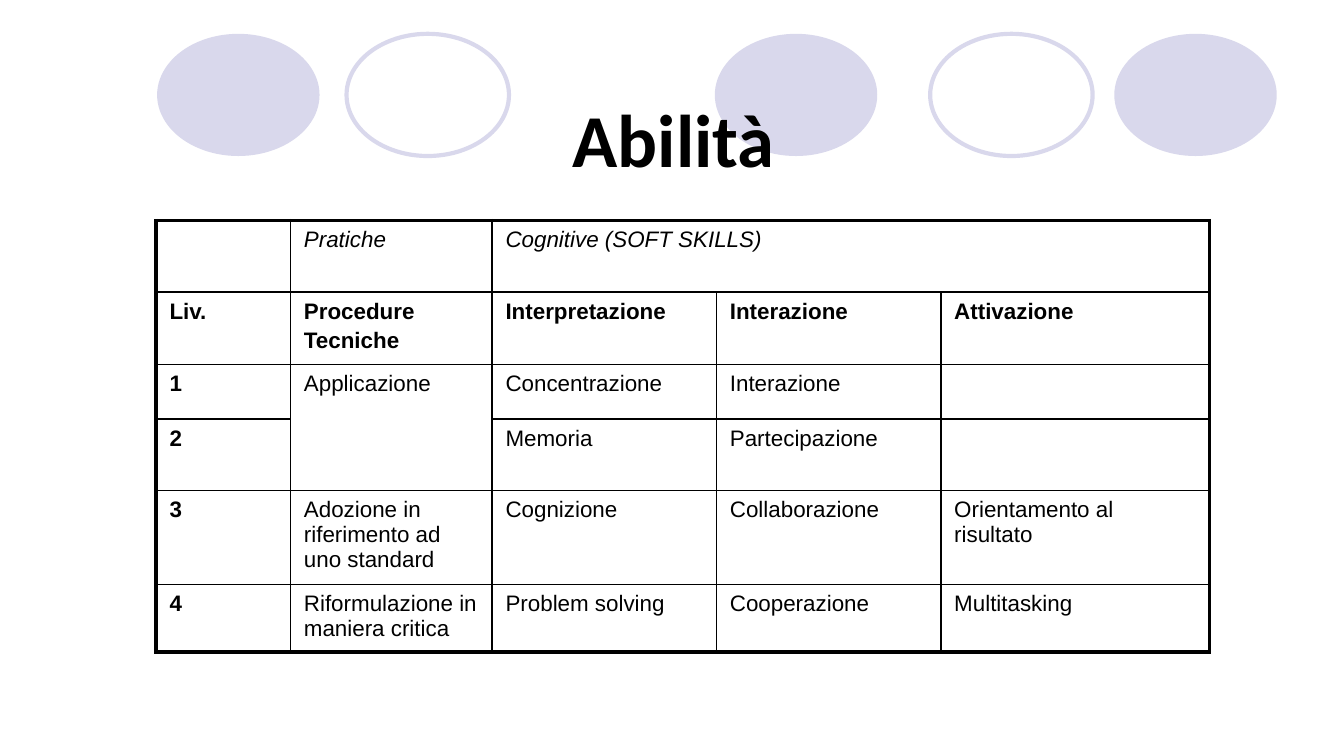
from typing import NamedTuple

from lxml.etree import SubElement
from pptx import Presentation
from pptx.dml.color import RGBColor
from pptx.enum.shapes import MSO_SHAPE
from pptx.enum.text import MSO_ANCHOR, MSO_AUTO_SIZE, PP_ALIGN
from pptx.oxml.ns import qn
from pptx.util import Cm, Pt

COLORS = {"ink": "000000", "lilac": "D9D8EC"}
THIN, THICK = Pt(1), Pt(2.25)


class Oval(NamedTuple):
    left: float
    filled: bool


class Merge(NamedTuple):
    first: tuple[int, int]
    last: tuple[int, int]


OVALS = [Oval(2.97, True), Oval(6.55, False), Oval(13.51, True),
         Oval(17.58, False), Oval(21.06, True)]
COLUMN_WIDTHS = [2.54, 3.81, 4.24, 4.24, 5.08]
ROW_HEIGHTS = [1.35, 1.37, 1.02, 1.35, 1.78, 1.27]
MERGES = [Merge((0, 2), (0, 4)), Merge((2, 1), (3, 1))]
SKILLS = [
    ["", "Pratiche", "Cognitive (SOFT SKILLS)", "", ""],
    ["Liv.", "Procedure\nTecniche", "Interpretazione", "Interazione", "Attivazione"],
    ["1", "Applicazione", "Concentrazione", "Interazione", ""],
    ["2", "", "Memoria", "Partecipazione", ""],
    ["3", "Adozione in riferimento ad uno standard", "Cognizione",
     "Collaborazione", "Orientamento al risultato"],
    ["4", "Riformulazione in maniera critica", "Problem solving",
     "Cooperazione", "Multitasking"],
]


def color(name: str) -> RGBColor:
    return RGBColor.from_string(COLORS[name])


def format_font(font, **values) -> None:
    for name, value in values.items():
        setattr(font, name, value)
    font.color.rgb = color("ink")


def draw_oval(page, oval: Oval) -> None:
    shape = page.shapes.add_shape(
        MSO_SHAPE.OVAL, Cm(oval.left), Cm(0.64), Cm(3.07), Cm(2.31))
    shape.shadow.inherit = False
    if oval.filled:
        shape.fill.solid()
        shape.fill.fore_color.rgb = color("lilac")
        shape.line.fill.background()
    else:
        shape.fill.background()
        shape.line.color.rgb = color("lilac")
        shape.line.width = THICK


def place_title(page) -> None:
    title = page.shapes.title
    page.shapes.element.append(title.element)  # in front of the ovals
    bounds = {"left": 10.57, "top": 1.63, "width": 4.47, "height": 3.48}
    for name, value in bounds.items():
        setattr(title, name, Cm(value))
    frame = title.text_frame
    frame.text = "Abilità"
    layout = {"word_wrap": False, "auto_size": MSO_AUTO_SIZE.NONE,
              "vertical_anchor": MSO_ANCHOR.TOP}
    for name, value in layout.items():
        setattr(frame, name, value)
    para = frame.paragraphs[0]
    para.alignment = PP_ALIGN.LEFT
    format_font(para.runs[0].font, name="Calibri", size=Pt(40), bold=True)


def draw_borders(cell, row: int, column: int) -> None:
    """Thick on the outside of the table, thin between cells."""
    bottom = row + (cell.span_height if cell.is_merge_origin else 1)
    right = column + (cell.span_width if cell.is_merge_origin else 1)
    outer = {"L": column == 0, "R": right == len(COLUMN_WIDTHS),
             "T": row == 0, "B": bottom == len(ROW_HEIGHTS)}
    properties = cell._tc.get_or_add_tcPr()
    for side, is_outer in outer.items():
        line = SubElement(properties, qn(f"a:ln{side}"),
                          w=str(THICK if is_outer else THIN))
        fill = SubElement(line, qn("a:solidFill"))
        SubElement(fill, qn("a:srgbClr"), val=COLORS["ink"])


def write_cell(cell, text: str, row: int, column: int) -> None:
    cell.text_frame.text = text
    for index, para in enumerate(cell.text_frame.paragraphs):
        if index:
            para.space_before = Pt(2.4)
        for span in para.runs:
            format_font(span.font, name="Arial", size=Pt(12),
                        bold=row == 1 or column == 0, italic=row == 0)


def draw_skills_table(page) -> None:
    table = page.shapes.add_table(
        len(ROW_HEIGHTS), len(COLUMN_WIDTHS), Cm(2.95), Cm(4.17),
        Cm(sum(COLUMN_WIDTHS)), Cm(sum(ROW_HEIGHTS))).table
    table.first_row = table.horz_banding = False
    for column, width in zip(table.columns, COLUMN_WIDTHS):
        column.width = Cm(width)
    for row, height in zip(table.rows, ROW_HEIGHTS):
        row.height = Cm(height)
    for merge in MERGES:
        table.cell(*merge.first).merge(table.cell(*merge.last))
    for row, texts in enumerate(SKILLS):
        for column, text in enumerate(texts):
            cell = table.cell(row, column)
            if not cell.is_spanned:
                draw_borders(cell, row, column)
                write_cell(cell, text, row, column)
            cell.fill.background()


def main() -> None:
    deck = Presentation()
    deck.slide_width, deck.slide_height = Cm(25.4), Cm(14.29)
    page = deck.slides.add_slide(deck.slide_layouts.get_by_name("Title Only"))
    for oval in OVALS:
        draw_oval(page, oval)
    place_title(page)
    draw_skills_table(page)
    deck.save("out.pptx")


if __name__ == "__main__":
    main()
